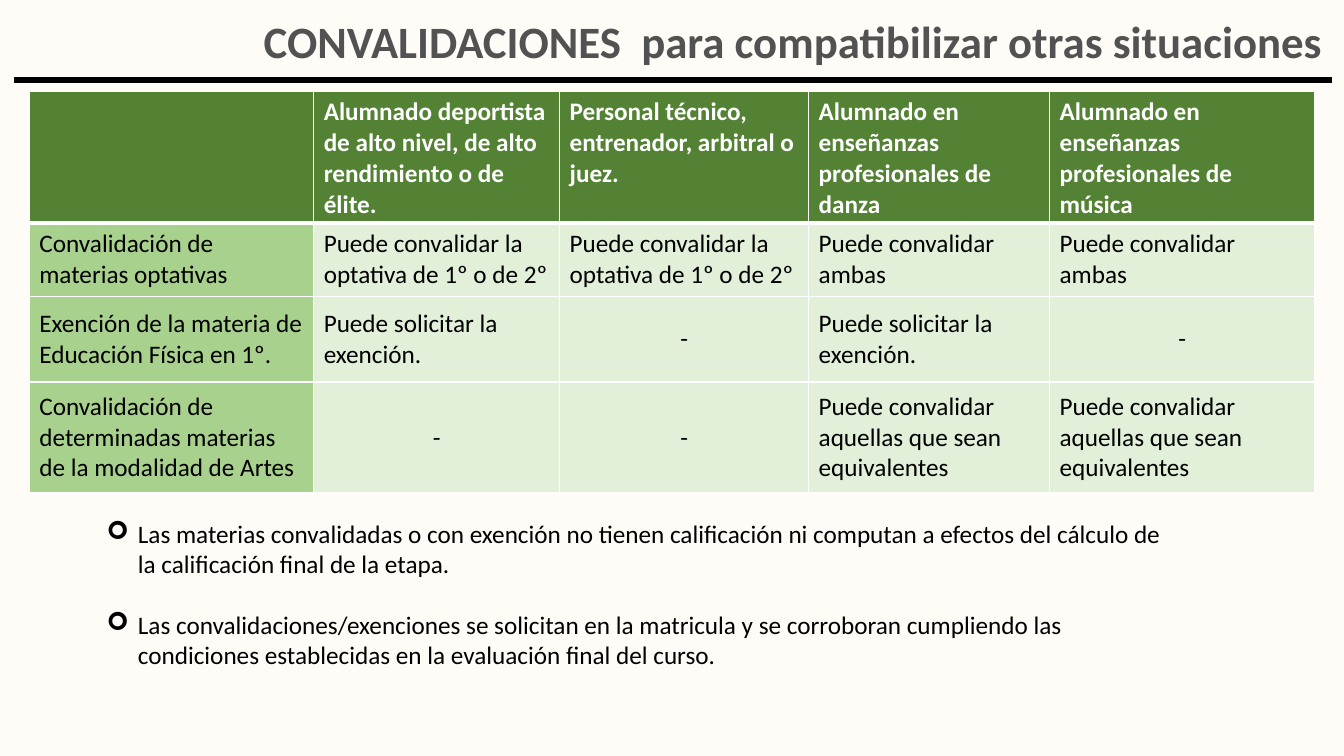
from pptx import Presentation
from pptx import util as u
from pptx.dml import color
from pptx.enum import shapes, text
from pptx.oxml import ns
from lxml import etree

GRID = 100
LEFT, RIGHT, CENTER = text.PP_ALIGN.LEFT, text.PP_ALIGN.RIGHT, text.PP_ALIGN.CENTER
TOP, MIDDLE = text.MSO_ANCHOR.TOP, text.MSO_ANCHOR.MIDDLE

COLUMN_SPANS = [21.16, 18.3, 18.53, 17.93, 19.73]
ROW_SPANS = [16.13, 9.73, 11.33, 14.67]
OPTATIVA = "Puede convalidar la optativa de 1º o de 2º"
AMBAS = "Puede convalidar ambas"
EXENCION = "Puede solicitar la exención."
EQUIVALENTES = "Puede convalidar aquellas que sean equivalentes"
SITUACIONES = [
    ["",
     "Alumnado deportista de alto nivel, de alto rendimiento o de élite.",
     "Personal técnico, entrenador, arbitral o juez.",
     "Alumnado en enseñanzas profesionales de danza",
     "Alumnado en enseñanzas profesionales de música"],
    ["Convalidación de materias optativas", OPTATIVA, OPTATIVA, AMBAS, AMBAS],
    ["Exención de la materia de Educación Física en 1º.", EXENCION, "-", EXENCION, "-"],
    ["Convalidación de determinadas materias de la modalidad de Artes",
     "-", "-", EQUIVALENTES, EQUIVALENTES],
]
ACLARACIONES = [
    "Las materias convalidadas o con exención no tienen calificación ni computan "
    "a efectos del cálculo de la calificación final de la etapa.",
    "Las convalidaciones/exenciones se solicitan en la matricula y se corroboran "
    "cumpliendo las condiciones establecidas en la evaluación final del curso.",
]


def rgb(code):
    return color.RGBColor.from_string(code)


def apply(target, values):
    for name, value in values.items():
        setattr(target, name, value)


def add_child(parent, tag, **attributes):
    return etree.SubElement(parent, ns.qn(tag), attributes)


class Board:
    font = "Calibri"
    palette = {"background": "FFFCF7", "title": "525252", "ink": "000000", "white": "FFFFFF",
               "header": "548235", "label": "A9D18E", "body": "E2F0D9"}

    def __init__(self, deck):
        self.deck = deck
        self.slide = deck.slides.add_slide(deck.slide_layouts[6])
        fill = self.slide.background.fill
        fill.solid()
        fill.fore_color.rgb = self.shade("background")

    def shade(self, role):
        return rgb(self.palette[role])

    def x(self, columns):
        return round(self.deck.slide_width * columns / GRID)

    def y(self, rows):
        return round(self.deck.slide_height * rows / GRID)

    def box(self, left, top, width, height):
        return self.x(left), self.y(top), self.x(width), self.y(height)

    def add_words(self, paragraph, words, role, size=18, bold=False, **layout):
        run = paragraph.add_run()
        run.text = words
        apply(run.font, {"name": self.font, "size": u.Pt(size), "bold": bold})
        run.font.color.rgb = self.shade(role)
        apply(paragraph, layout)

    def text_frame(self, place, **frame_format):
        frame = self.slide.shapes.add_textbox(*self.box(*place)).text_frame
        apply(frame, {"word_wrap": True, **frame_format})
        return frame

    def title(self, words, place):
        heading = self.text_frame(place, vertical_anchor=TOP).paragraphs[0]
        self.add_words(heading, words, "title", 32, True, alignment=RIGHT, line_spacing=0.9)

    def rule(self, left, right, row, weight):
        rule = self.slide.shapes.add_connector(
            shapes.MSO_CONNECTOR.STRAIGHT, self.x(left), self.y(row), self.x(right), self.y(row))
        rule.line.width = u.Pt(weight)
        rule.line.color.rgb = self.shade("ink")
        add_child(rule._element.spPr, "a:effectLst")

    def border(self, cell, weights):
        properties = cell._tc.get_or_add_tcPr()
        for side, weight in weights.items():
            edge = add_child(properties, f"a:ln{side}", w=str(u.Pt(weight)))
            add_child(add_child(edge, "a:solidFill"), "a:srgbClr", val=self.palette["white"])

    def table(self, rows, left, top):
        place = self.box(left, top, sum(COLUMN_SPANS), sum(ROW_SPANS))
        table = self.slide.shapes.add_table(len(rows), len(rows[0]), *place).table
        table.horz_banding = False
        for column, span in zip(table.columns, COLUMN_SPANS):
            column.width = self.x(span)
        for r, row in enumerate(rows):
            table.rows[r].height = self.y(ROW_SPANS[r])
            for c, words in enumerate(row):
                header = r == 0
                cell = table.cell(r, c)
                self.border(cell, {"L": 1, "R": 1, "T": 3 if r == 1 else 1, "B": 3 if header else 1})
                cell.fill.solid()
                cell.fill.fore_color.rgb = self.shade(
                    "header" if header else "body" if c else "label")
                cell.vertical_anchor = TOP if header else MIDDLE
                if words:
                    self.add_words(cell.text_frame.paragraphs[0], words,
                                   "white" if header else "ink", bold=header,
                                   alignment=CENTER if words == "-" else LEFT)

    def bullets(self, items, place, indent, gap):
        frame = self.text_frame(place, auto_size=text.MSO_AUTO_SIZE.SHAPE_TO_FIT_TEXT)
        for i, words in enumerate(items):
            item = frame.add_paragraph() if i else frame.paragraphs[0]
            self.add_words(item, words, "ink", space_before=u.Pt(gap if i else 0))
            properties = item._p.get_or_add_pPr()
            properties.set("marL", str(u.Inches(indent)))
            properties.set("indent", str(-u.Inches(indent)))
            add_child(properties, "a:buFont", typeface="Wingdings")
            add_child(properties, "a:buChar", char="➢")


def main():
    deck = Presentation()
    apply(deck, {"slide_width": u.Inches(13.33), "slide_height": u.Inches(7.5)})
    board = Board(deck)
    board.title("CONVALIDACIONES  para compatibilizar otras situaciones", (10.43, 2, 88.75, 10.13))
    board.rule(1.05, 99.1, 10.53, 4.25)
    board.table(SITUACIONES, 2.18, 12.13)
    board.bullets(ACLARACIONES, (7.2, 67.87, 81.02, 25.6), indent=0.31, gap=22)
    deck.save("out.pptx")


if __name__ == "__main__":
    main()
